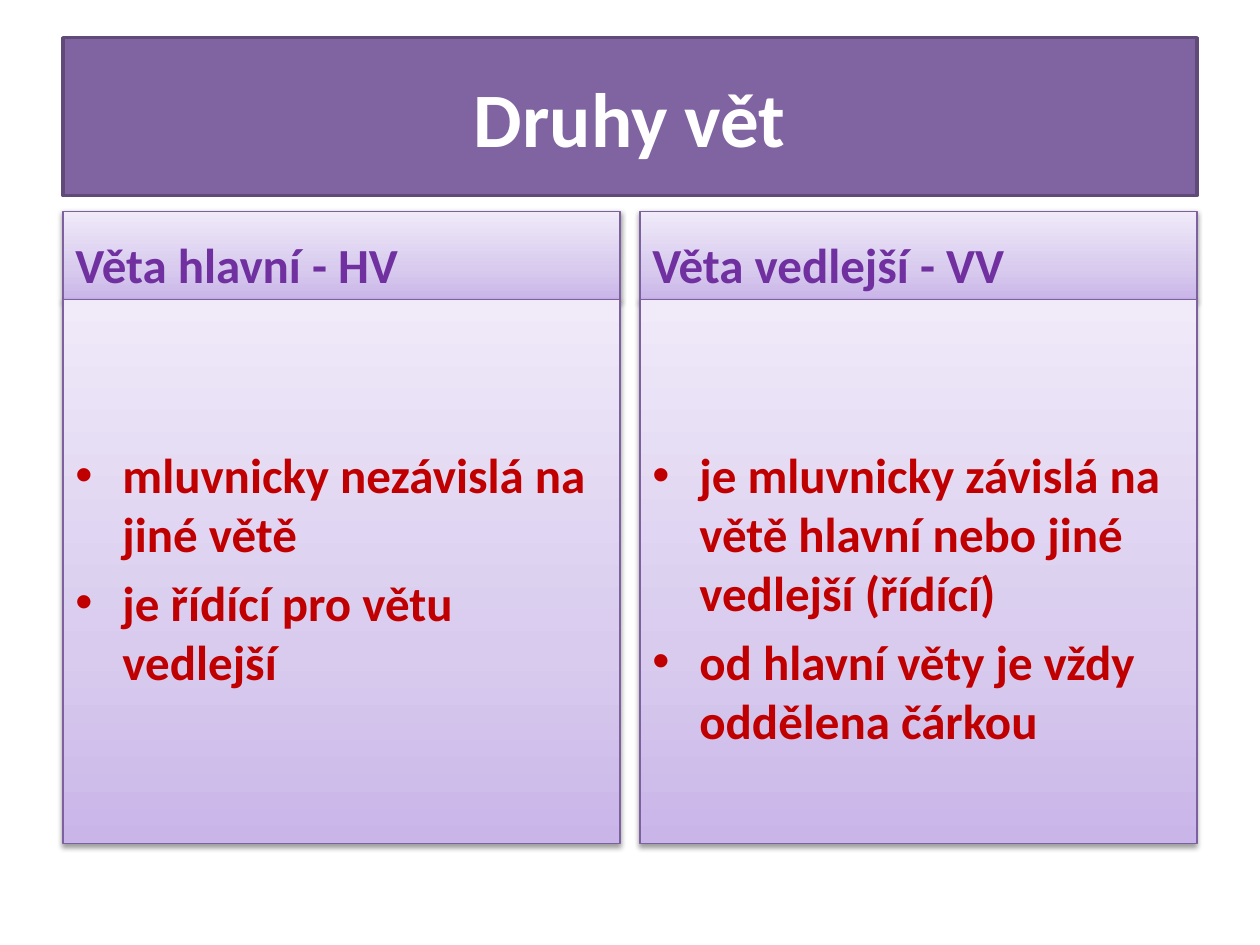
from lxml import etree
from pptx import Presentation, util as u
from pptx.dml.color import RGBColor
from pptx.enum import shapes, text
from pptx.oxml import parse_xml
from pptx.oxml.ns import nsdecls, qn

FONT = "Calibri"
PANEL_STOPS = [(0, "C9B5E8"), (35, "D8CBEE"), (100, "F0EAF9")]
COLUMNS = [
    ("Věta hlavní - HV",
     ["mluvnicky nezávislá na jiné větě", "je řídící pro větu vedlejší"]),
    ("Věta vedlejší - VV",
     ["je mluvnicky závislá na větě hlavní nebo jiné vedlejší (řídící)",
      "od hlavní věty je vždy oddělena čárkou"]),
]


def color(hex_value):
    return RGBColor.from_string(hex_value)


def add_box(slide, left, top, width, height, line, line_width):
    shape = slide.shapes.add_shape(
        shapes.MSO_SHAPE.RECTANGLE, u.Cm(left), u.Cm(top), u.Cm(width), u.Cm(height))
    shape.shadow.inherit = False
    shape.line.color.rgb = color(line)
    shape.line.width = u.Pt(line_width)
    return shape


def add_panel(slide, left, top, width, height):
    """Box with a vertical lilac gradient and a soft shadow below it."""
    shape = add_box(slide, left, top, width, height, "7D60A0", 0.75)
    properties = shape.fill._xPr
    stops = "".join(
        f'<a:gs pos="{position * 1000}"><a:srgbClr val="{value}"/></a:gs>'
        for position, value in PANEL_STOPS)
    gradient = parse_xml(
        f'<a:gradFill {nsdecls("a")} rotWithShape="1"><a:gsLst>{stops}</a:gsLst>'
        '<a:lin ang="16200000" scaled="0"/></a:gradFill>')
    properties.find(qn("a:prstGeom")).addnext(gradient)
    effects = properties.find(qn("a:effectLst"))
    effects.append(parse_xml(
        f'<a:outerShdw {nsdecls("a")} blurRad="{u.Pt(3.1)}" dist="{u.Pt(1.6)}" '
        'dir="5400000" rotWithShape="0"><a:srgbClr val="000000">'
        '<a:alpha val="38000"/></a:srgbClr></a:outerShdw>'))
    return shape


def add_bullet(paragraph, indent):
    properties = paragraph._p.get_or_add_pPr()
    properties.set("marL", str(u.Cm(indent)))
    properties.set("indent", str(-u.Cm(indent)))
    etree.SubElement(properties, qn("a:buFont")).set("typeface", "Arial")
    etree.SubElement(properties, qn("a:buChar")).set("char", "•")


def write(shape, lines, size=28, fill="000000", align=text.PP_ALIGN.LEFT,
          anchor=text.MSO_ANCHOR.TOP, top_inset=0.13, bullets=False):
    frame = shape.text_frame
    frame.word_wrap = True
    frame.vertical_anchor = anchor
    frame.margin_top = u.Cm(top_inset)
    for index, line in enumerate(lines):
        paragraph = frame.add_paragraph() if index else frame.paragraphs[0]
        paragraph.alignment = align
        paragraph.space_before = u.Pt(size * 0.2 if index else 0)
        if bullets:
            add_bullet(paragraph, 0.95)
        run = paragraph.add_run()
        run.text = line
        run.font.name = FONT
        run.font.size = u.Pt(size)
        run.font.bold = True
        run.font.color.rgb = color(fill)


def add_title(slide, left, top, width, height, title):
    shape = add_box(slide, left, top, width, height, "5F4A78", 2)
    shape.fill.solid()
    shape.fill.fore_color.rgb = color("8064A2")
    write(shape, [title], size=44, fill="FFFFFF", align=text.PP_ALIGN.CENTER,
          anchor=text.MSO_ANCHOR.MIDDLE)


def add_column(slide, left, top, width, height, heading, points):
    heading_height = 1.78
    header = add_panel(slide, left, top, width, heading_height)
    write(header, [heading], fill="7030A0", anchor=text.MSO_ANCHOR.BOTTOM)
    body = add_panel(slide, left, top + heading_height, width, height - heading_height)
    write(body, points, fill="C00000", top_inset=2.93, bullets=True)


def main():
    presentation = Presentation()
    presentation.slide_width, presentation.slide_height = u.Cm(25.4), u.Cm(19.05)
    slide = presentation.slides.add_slide(presentation.slide_layouts[6])

    margin, content_width, gap = 1.27, 22.86, 0.4
    add_title(slide, margin, 0.76, content_width, 3.18, "Druhy vět")
    column_width = (content_width - gap) / 2
    for index, (heading, points) in enumerate(COLUMNS):
        left = margin + index * (column_width + gap)
        add_column(slide, left, 4.26, column_width, 12.75, heading, points)
    presentation.save("out.pptx")


if __name__ == "__main__":
    main()
